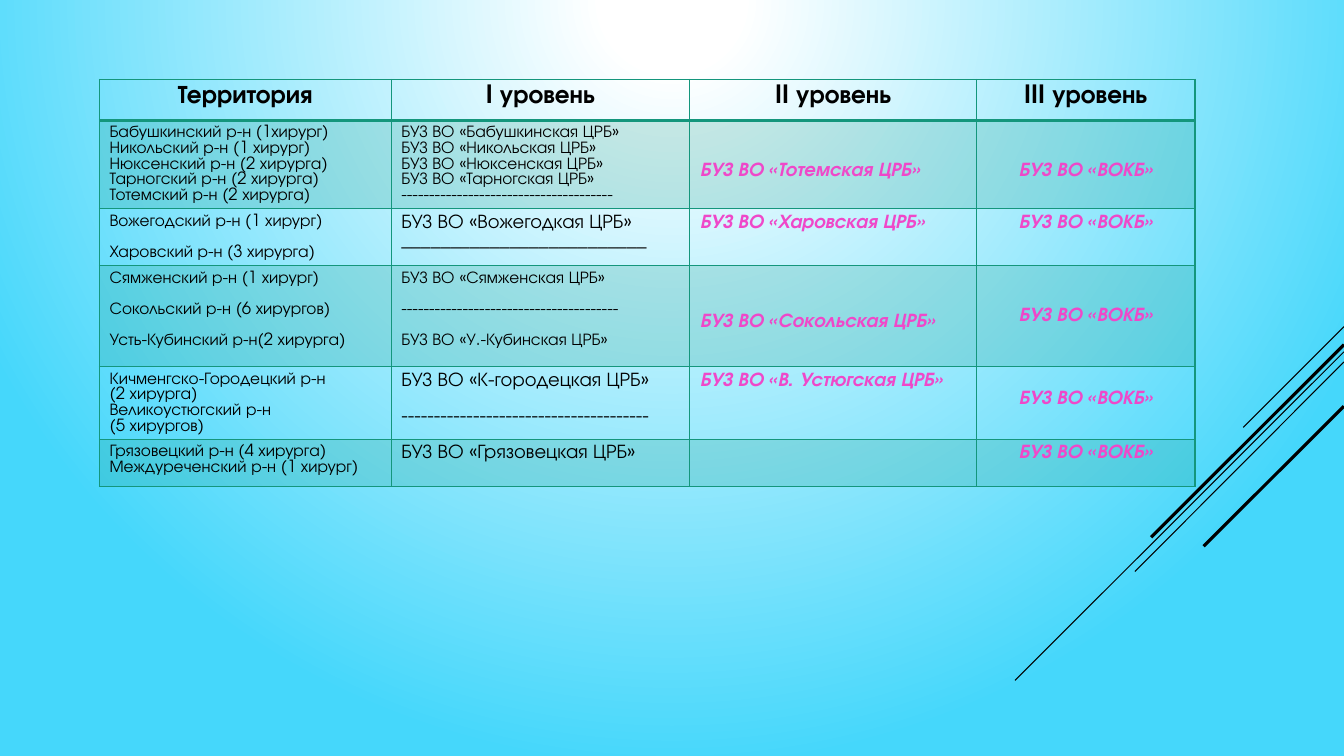
from dataclasses import dataclass

from lxml.etree import SubElement
from pptx import Presentation
from pptx.dml.color import RGBColor
from pptx.enum.shapes import MSO_CONNECTOR
from pptx.enum.text import PP_ALIGN
from pptx.oxml import parse_xml
from pptx.oxml.ns import nsdecls, qn
from pptx.slide import Slide
from pptx.table import Table, _Cell
from pptx.util import Pt

COLORS = {"white": "FFFFFF", "sky": "45D7FB", "black": "000000", "green": "14967C", "pink": "EF48C9"}
FONT = "TeX Gyre Adventor"
LINE_RATIO = 0.93
MARGIN_TOP = 3.6
COLUMN_WIDTHS = (208.4, 213.2, 205, 155.9)
FORMATS = {
    "header": {"size": Pt(18), "bold": True, "italic": False},
    "small": {"size": Pt(12), "bold": False, "italic": False},
    "large": {"size": Pt(14), "bold": False, "italic": False},
    "accent": {"size": Pt(14), "bold": True, "italic": True},
}


@dataclass(frozen=True)
class Entry:
    lines: tuple[str, ...]
    style: str = "small"
    spaced: bool = False
    offset: float = 0
    centered: bool = False


@dataclass(frozen=True)
class Band:
    height: float
    entries: tuple[Entry, ...]
    shaded: bool = False


@dataclass(frozen=True)
class Ray:
    x1: float
    y1: float
    x2: float
    y2: float
    weight: float


def level_two(name: str, offset: float = 0) -> Entry:
    return Entry((name,), "accent", offset=offset)


def level_three(offset: float = 0) -> Entry:
    return Entry(("БУЗ ВО «ВОКБ»",), "accent", offset=offset, centered=True)


RAYS = (
    Ray(960, 233.3, 888, 305.3, 0.75),
    Ray(960, 251.3, 725, 486, 0.75),
    Ray(960, 258.5, 810.7, 408.2, 0.75),
    Ray(960, 246.2, 822.2, 383.8, 2.25),
    Ray(960, 290.2, 859.7, 390.2, 2.25),
)
HEADINGS = ("Территория", "I уровень", "II уровень", "III уровень")
BANDS = (
    Band(29.4, tuple(Entry((heading,), "header", centered=True) for heading in HEADINGS)),
    Band(63, (
        Entry(("Бабушкинский р-н (1хирург)", "Никольский р-н (1 хирург)", "Нюксенский р-н (2 хирурга)",
               "Тарногский р-н (2 хирурга)", "Тотемский р-н (2 хирурга)")),
        Entry(("БУЗ ВО «Бабушкинская ЦРБ»", "БУЗ ВО «Никольская ЦРБ»", "БУЗ ВО «Нюксенская ЦРБ»",
               "БУЗ ВО «Тарногская ЦРБ»", "--------------------------------------")),
        level_two("БУЗ ВО «Тотемская ЦРБ»", 26),
        level_three(26),
    ), True),
    Band(40.7, (
        Entry(("Вожегодский р-н (1 хирург)", "Харовский р-н (3 хирурга)"), spaced=True),
        Entry(("БУЗ ВО «Вожегодкая ЦРБ»", "_________________________"), "large"),
        level_two("БУЗ ВО «Харовская ЦРБ»"),
        level_three(),
    )),
    Band(72.1, (
        Entry(("Сямженский р-н (1 хирург)", "Сокольский р-н (6 хирургов)",
               "Усть-Кубинский р-н(2 хирурга)"), spaced=True),
        Entry(("БУЗ ВО «Сямженская ЦРБ»", "---------------------------------------",
               "БУЗ ВО «У.-Кубинская ЦРБ»"), spaced=True),
        level_two("БУЗ ВО «Сокольская ЦРБ»", 30),
        level_three(26),
    ), True),
    Band(51.9, (
        Entry(("Кичменгско-Городецкий р-н", "(2 хирурга)", "Великоустюгский р-н", "(5 хирургов)")),
        Entry(("БУЗ ВО «К-городецкая ЦРБ»", "--------------------------------------"), "large", spaced=True),
        level_two("БУЗ ВО «В. Устюгская ЦРБ»"),
        level_three(13),
    )),
    Band(33.5, (
        Entry(("Грязовецкий р-н (4 хирурга)", "Междуреченский р-н (1 хирург)")),
        Entry(("БУЗ ВО «Грязовецкая ЦРБ»",), "large"),
        Entry(()),
        level_three(),
    ), True),
)


def rgb(name: str) -> RGBColor:
    return RGBColor.from_string(COLORS[name])


def paint_background(slide: Slide) -> None:
    fill = slide.background.fill
    fill.gradient()
    for stop, (color, position) in zip(fill.gradient_stops, (("white", 0.09), ("sky", 1))):
        stop.color.rgb = rgb(color)
        stop.position = position
    gradient = next(slide.element.iter(qn("a:gradFill")))
    gradient.remove(gradient.find(qn("a:lin")))
    gradient.append(parse_xml(
        f'<a:path {nsdecls("a")} path="circle"><a:fillToRect l="0" t="0" r="0" b="100000"/></a:path>'))


def draw_ray(slide: Slide, ray: Ray) -> None:
    connector = slide.shapes.add_connector(
        MSO_CONNECTOR.STRAIGHT, Pt(ray.x1), Pt(ray.y1), Pt(ray.x2), Pt(ray.y2))
    connector.line.color.rgb = rgb("black")
    connector.line.width = Pt(ray.weight)
    SubElement(connector.element.spPr, qn("a:effectLst"))


def shade_cell(cell: _Cell, shaded: bool) -> None:
    if not shaded:
        cell.fill.background()
        return
    cell.fill.solid()
    cell.fill.fore_color.rgb = rgb("green")
    color = next(cell._tc.tcPr.iter(qn("a:srgbClr")))
    SubElement(color, qn("a:alpha"), val="20000")


def border_cell(cell: _Cell, bottom: float, top: float) -> None:
    widths = {"lnL": 1, "lnR": 1, "lnT": top, "lnB": bottom}
    for index, (side, width) in enumerate(widths.items()):
        cell._tc.tcPr.insert(index, parse_xml(
            f'<a:{side} {nsdecls("a")} w="{Pt(width)}"><a:solidFill>'
            f'<a:srgbClr val="{COLORS["green"]}"/></a:solidFill></a:{side}>'))


def write_entry(cell: _Cell, entry: Entry) -> None:
    cell.margin_top = Pt(MARGIN_TOP + entry.offset)
    style = FORMATS[entry.style]
    pitch = Pt(round(style["size"].pt * LINE_RATIO, 2))
    frame = cell.text_frame
    for index, line in enumerate(entry.lines):
        paragraph = frame.add_paragraph() if index else frame.paragraphs[0]
        paragraph.alignment = PP_ALIGN.CENTER if entry.centered else PP_ALIGN.LEFT
        paragraph.line_spacing = pitch
        if entry.spaced and index:
            paragraph.space_before = pitch
        run = paragraph.add_run()
        run.text = line
        run.font.name = FONT
        run.font.color.rgb = rgb("pink" if entry.style == "accent" else "black")
        for attribute, value in style.items():
            setattr(run.font, attribute, value)


def fill_band(table: Table, row: int, band: Band) -> None:
    table.rows[row].height = Pt(band.height)
    for column, entry in enumerate(band.entries):
        cell = table.cell(row, column)
        write_entry(cell, entry)
        shade_cell(cell, band.shaded)
        border_cell(cell, bottom=2 if row == 0 else 1, top=2 if row == 1 else 1)


def draw_hospitals(slide: Slide) -> None:
    table = slide.shapes.add_table(
        len(BANDS), len(COLUMN_WIDTHS), Pt(71.1), Pt(56.7),
        Pt(sum(COLUMN_WIDTHS)), Pt(sum(band.height for band in BANDS))).table
    table.horz_banding = False
    for column, width in zip(table.columns, COLUMN_WIDTHS):
        column.width = Pt(width)
    for row, band in enumerate(BANDS):
        fill_band(table, row, band)


def main() -> None:
    presentation = Presentation()
    presentation.slide_width = Pt(960)
    presentation.slide_height = Pt(540)
    slide = presentation.slides.add_slide(presentation.slide_layouts[6])
    paint_background(slide)
    for ray in RAYS:
        draw_ray(slide, ray)
    draw_hospitals(slide)
    presentation.save("out.pptx")


if __name__ == "__main__":
    main()
